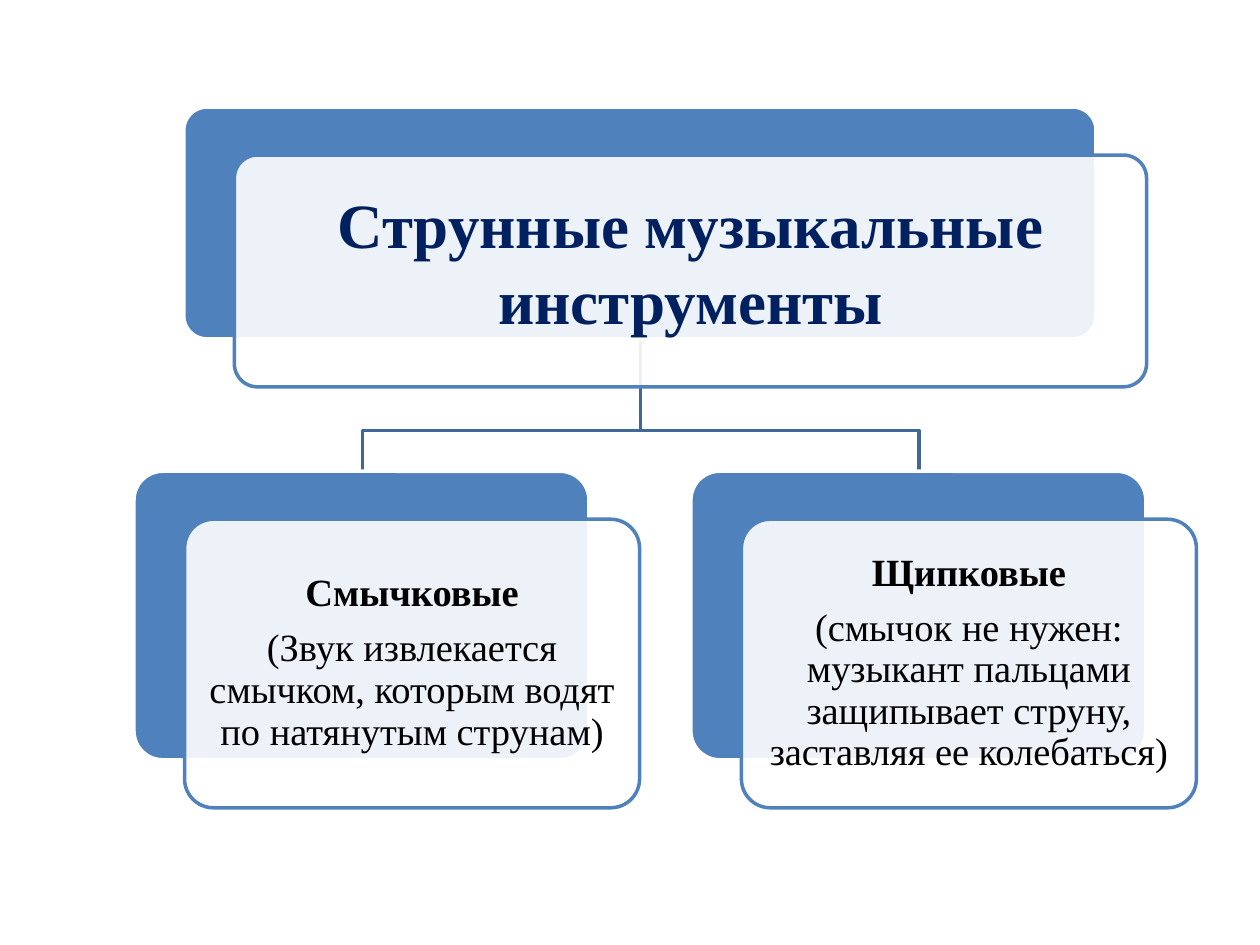
from lxml.etree import SubElement
from pptx import Presentation
from pptx.dml.color import RGBColor
from pptx.enum.shapes import MSO_SHAPE
from pptx.enum.text import MSO_ANCHOR, MSO_AUTO_SIZE, PP_ALIGN
from pptx.oxml.ns import qn
from pptx.util import Pt

TITLE = "Струнные музыкальные инструменты"
BRANCHES = [
    ("Смычковые",
     "(Звук извлекается смычком, которым водят по натянутым струнам)"),
    ("Щипковые",
     "(смычок не нужен: музыкант пальцами защипывает струну, "
     "заставляя ее колебаться)"),
]

THEME = {
    "font": "Times New Roman", "title_size": 36, "body_size": 22,
    "blue": "4F81BD", "link": "3F6797", "white": "FFFFFF",
    "title": "002060", "text": "000000", "line": 2,
}

CENTER = 365.7
ROOT_TOP, ROOT_W, ROOT_H = 61.2, 521.3, 132.5
BRANCH_TOP, BRANCH_W, BRANCH_H = 269.3, 260, 164.9
BRANCH_GAP = 58.2
JOINT_Y = 245.5
SHIFT_X, SHIFT_Y = 28.9, 27.4


def color(name):
    return RGBColor.from_string(THEME[name])


def set_line(shape, name):
    shape.line.color.rgb = color(name)
    shape.line.width = Pt(THEME["line"])
    shape.shadow.inherit = False


def add_panel(s, box, fill, line, opacity=100):
    sp = s.shapes.add_shape(MSO_SHAPE.ROUNDED_RECTANGLE, *map(Pt, box))
    sp.adjustments[0] = 0.1
    sp.fill.solid()
    sp.fill.fore_color.rgb = color(fill)
    set_line(sp, line)
    if opacity < 100:
        clr = sp.fill._xPr.find(qn("a:solidFill"))[0]
        SubElement(clr, qn("a:alpha"), val=str(opacity * 1000))
    return sp


def add_card(s, x, y, w, h):
    """Draw a blue plate with a shifted translucent panel; return the panel and its box."""
    add_panel(s, (x, y, w, h), "blue", "white")
    box = (x + SHIFT_X, y + SHIFT_Y, w, h)
    return add_panel(s, box, "white", "blue", opacity=90), box


def add_link(s, x):
    points = [(CENTER, JOINT_Y), (x, JOINT_Y), (x, BRANCH_TOP)]
    fb = s.shapes.build_freeform(CENTER, ROOT_TOP + ROOT_H, scale=Pt(1))
    fb.add_line_segments(points, close=False)
    sp = fb.convert_to_shape()
    sp.fill.background()
    set_line(sp, "link")


def set_frame(tf, inset, bottom=None):
    tf.word_wrap = True
    tf.auto_size = MSO_AUTO_SIZE.NONE
    tf.vertical_anchor = MSO_ANCHOR.MIDDLE
    tf.margin_left = tf.margin_right = tf.margin_top = Pt(inset)
    tf.margin_bottom = Pt(inset if bottom is None else bottom)


def write(p, text, size, ink="text", bold=False, spacing=1.0, after=0):
    p.alignment = PP_ALIGN.CENTER
    p.line_spacing = spacing
    p.space_before, p.space_after = Pt(0), Pt(after)
    r = p.add_run()
    r.text = text
    r.font.name = THEME["font"]
    r.font.size = Pt(size)
    r.font.bold = bold
    r.font.color.rgb = color(ink)


def main():
    prs = Presentation()
    prs.slide_width, prs.slide_height = Pt(720), Pt(540)
    s = prs.slides.add_slide(prs.slide_layouts[5])

    step = BRANCH_W + BRANCH_GAP
    centers = [CENTER + (i - (len(BRANCHES) - 1) / 2) * step
               for i in range(len(BRANCHES))]
    for x in reversed(centers):
        add_link(s, x)

    _, box = add_card(s, CENTER - ROOT_W / 2, ROOT_TOP, ROOT_W, ROOT_H)
    title = s.shapes.title
    title.left, title.top, title.width, title.height = map(Pt, box)
    s.shapes._spTree.append(title._element)  # bring in front of the panel
    set_frame(title.text_frame, 10.8, bottom=22)
    write(title.text_frame.paragraphs[0], TITLE, THEME["title_size"],
          ink="title", bold=True)

    for x, (heading, note) in zip(centers, BRANCHES):
        panel, _ = add_card(s, x - BRANCH_W / 2, BRANCH_TOP, BRANCH_W, BRANCH_H)
        tf = panel.text_frame
        set_frame(tf, 6.5)
        fmt = {"size": THEME["body_size"], "spacing": 0.9, "after": 7.7}
        write(tf.paragraphs[0], heading, bold=True, **fmt)
        write(tf.add_paragraph(), note, **fmt)

    prs.save("out.pptx")


if __name__ == "__main__":
    main()
